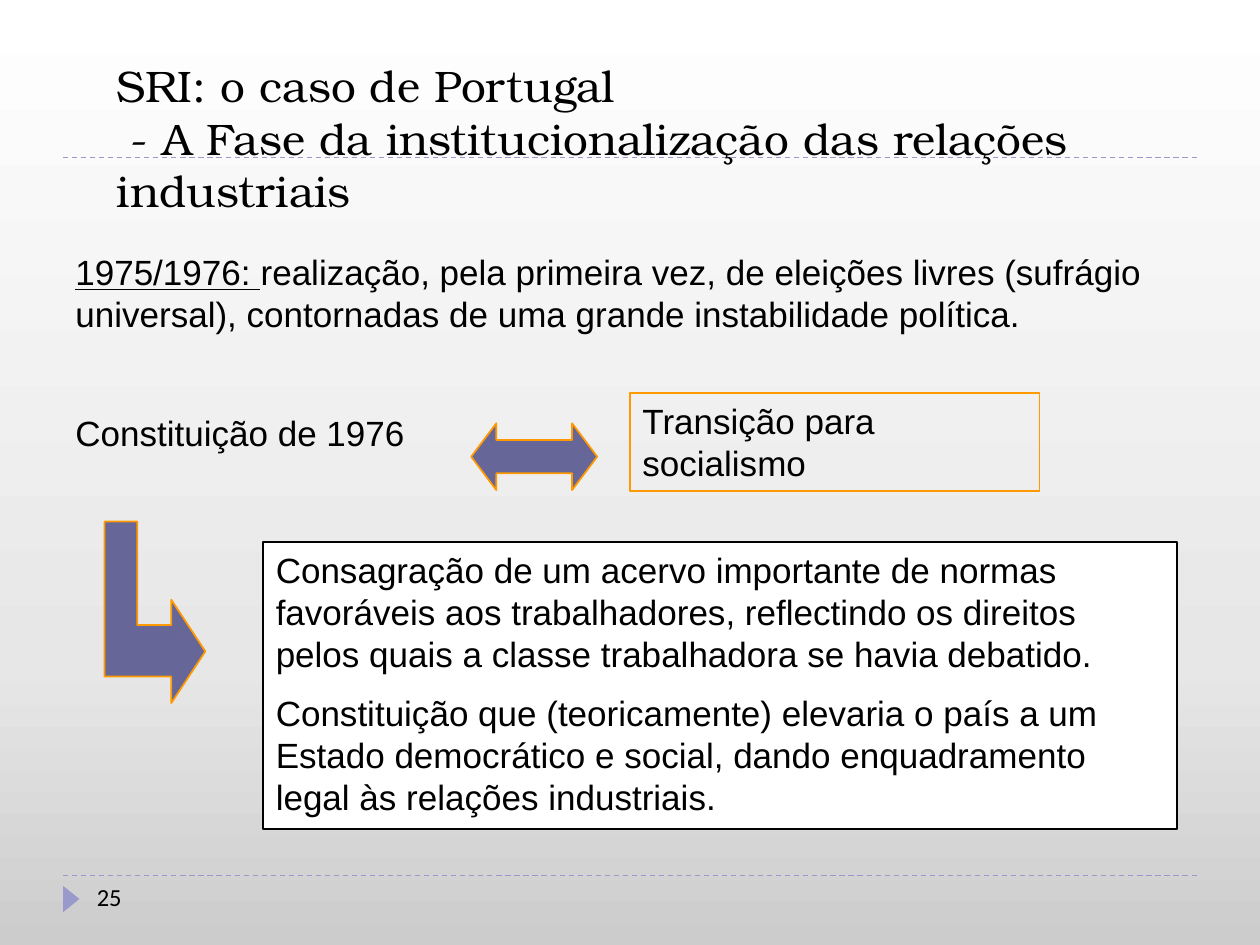
from copy import deepcopy

from pptx import Presentation
from pptx.dml.color import RGBColor
from pptx.enum.dml import MSO_LINE
from pptx.enum.shapes import MSO_CONNECTOR, MSO_SHAPE
from pptx.enum.text import MSO_ANCHOR, PP_ALIGN
from pptx.oxml.ns import qn
from pptx.oxml.xmlchemy import OxmlElement
from pptx.util import Inches, Pt

BLACK, WHITE = "000000", "FFFFFF"
LILAC, PURPLE, ORANGE = "9999CC", "666699", "FF9900"
BODY = {"name": "Arial", "size": Pt(20)}
TITLE = {"name": "TeX Gyre Bonum", "size": Pt(25.2)}
NUMBER = {"name": "Calibri", "size": Pt(14)}


def rgb(value):
    return RGBColor.from_string(value)


class SlideBuilder:
    def __init__(self, slide):
        self.s = slide

    def background(self, stops, angle):
        fill = self.s.background.fill
        fill.gradient()
        fill.gradient_angle = angle
        gs_list = self.s.element.find(".//" + qn("a:gsLst"))
        while len(gs_list) < len(stops):
            gs_list.append(deepcopy(gs_list[0]))
        for stop, (position, color) in zip(fill.gradient_stops, stops):
            stop.position = position
            stop.color.rgb = rgb(color)

    def paint(self, sp, fill=None, line=None):
        sp.shadow.inherit = False
        if fill:
            sp.fill.solid()
            sp.fill.fore_color.rgb = rgb(fill)
        else:
            sp.fill.background()
        if line:
            sp.line.color.rgb = rgb(line)
            sp.line.width = Pt(1)
        else:
            sp.line.fill.background()

    def shape(self, kind, box, fill=None, line=None, adjustments=(), rotation=0):
        sp = self.s.shapes.add_shape(kind, *map(Inches, box))
        self.paint(sp, fill, line)
        sp.rotation = rotation
        for i, value in enumerate(adjustments):
            sp.adjustments[i] = value
        return sp

    def freeform(self, points, fill, line):
        start, *rest = [(Inches(x), Inches(y)) for x, y in points]
        builder = self.s.shapes.build_freeform(*start)
        builder.add_line_segments(rest, close=True)
        self.paint(builder.convert_to_shape(), fill, line)

    def dashed_rule(self, y):
        c = self.s.shapes.add_connector(
            MSO_CONNECTOR.STRAIGHT, Inches(0.5), Inches(y), Inches(9.5), Inches(y))
        c.line.color.rgb = rgb(LILAC)
        c.line.width = Pt(0.75)
        c.line.dash_style = MSO_LINE.DASH
        c._element.spPr.append(OxmlElement("a:effectLst"))

    def set_text(self, sp, paragraphs, font=BODY, anchor=MSO_ANCHOR.TOP, gap=10):
        """Each paragraph is a list of (text, extra font values); None breaks the line."""
        tf = sp.text_frame
        tf.word_wrap = True
        tf.vertical_anchor = anchor
        for i, runs in enumerate(paragraphs):
            p = tf.add_paragraph() if i else tf.paragraphs[0]
            p.alignment = PP_ALIGN.LEFT
            p.space_before = Pt(gap if i else 0)
            for text, extra in runs:
                if text is None:
                    p.add_line_break()
                    continue
                r = p.add_run()
                r.text = text
                r.font.color.rgb = rgb(BLACK)
                for key, value in {**font, **extra}.items():
                    setattr(r.font, key, value)

    def text(self, box, paragraphs, **style):
        self.set_text(self.s.shapes.add_textbox(*map(Inches, box)), paragraphs, **style)


def main():
    prs = Presentation()
    prs.slide_width, prs.slide_height = Inches(10), Inches(7.5)
    b = SlideBuilder(prs.slides.add_slide(prs.slide_layouts[6]))

    # Background, rules and page marker
    b.background([(0, "CCCCCC"), (0.3, "E7E7E7"), (1, WHITE)], 90)
    for y in (6.95, 1.25):
        b.dashed_rule(y)
    b.shape(MSO_SHAPE.ISOSCELES_TRIANGLE, (0.46, 7.07, 0.21, 0.13), LILAC, rotation=90)

    # Title and page number
    b.text((0.83, 0.44, 8.5, 1.33), [[
        ("SRI: o caso de Portugal ", {}),
        (None, {}),
        (" - A Fase da institucionalização das relações industriais", {}),
    ]], font=TITLE, anchor=MSO_ANCHOR.BOTTOM)
    b.text((0.67, 6.95, 2.17, 0.4), [[("25", {})]], font=NUMBER)

    # Main text
    b.text((0.5, 1.94, 9.5, 2.87), [
        [("1975/1976: ", {"underline": True}),
         ("realização, pela primeira vez, de eleições livres (sufrágio universal), "
          "contornadas de uma grande instabilidade política.", {})],
        [("Constituição de 1976", {})],
    ], gap=44)

    # Transition to socialism
    b.shape(MSO_SHAPE.LEFT_RIGHT_ARROW, (3.74, 3.36, 1, 0.53), PURPLE, ORANGE, (0.5, 0.376))
    transition = b.shape(MSO_SHAPE.RECTANGLE, (5, 3.12, 3.25, 0.78), line=ORANGE)
    b.set_text(transition, [[("Transição para socialismo", {})]])

    # Consequences of the constitution
    consequences = b.shape(MSO_SHAPE.RECTANGLE, (2.09, 4.3, 7.25, 2.28), WHITE, BLACK)
    b.set_text(consequences, [
        [("Consagração de um acervo importante de normas favoráveis aos trabalhadores, "
          "reflectindo os direitos pelos quais a classe trabalhadora se havia debatido.", {})],
        [("Constituição que (teoricamente) elevaria o país a um Estado democrático e "
          "social, dando enquadramento legal às relações industriais.", {})],
    ])
    b.freeform([(1.63, 5.17), (1.36, 4.76), (1.36, 4.96), (1.09, 4.96), (1.09, 4.14),
                (0.83, 4.14), (0.83, 5.37), (1.36, 5.37), (1.36, 5.58)], PURPLE, ORANGE)

    prs.save("out.pptx")


if __name__ == "__main__":
    main()
